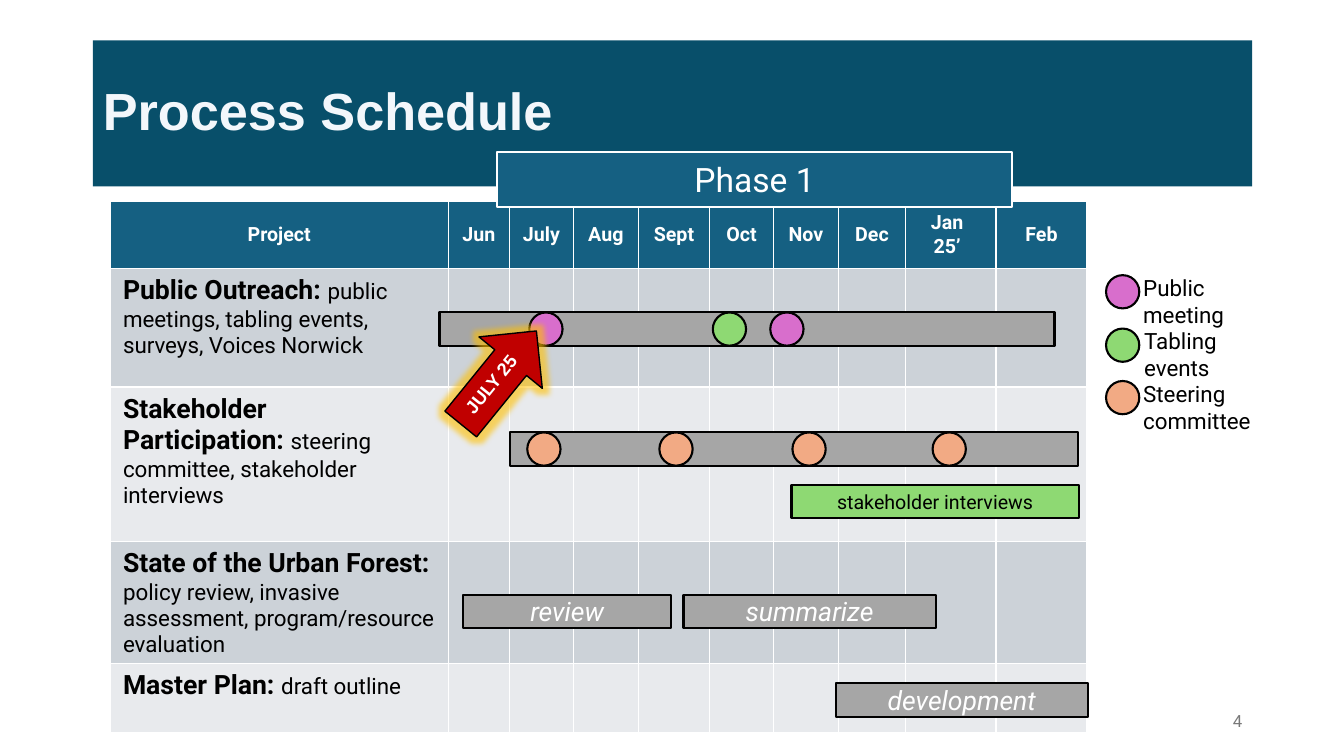
from dataclasses import dataclass
from itertools import product

from lxml.etree import SubElement
from pptx import Presentation
from pptx.dml.color import RGBColor
from pptx.enum.shapes import MSO_SHAPE as Preset
from pptx.enum.text import MSO_ANCHOR as Anchor, MSO_AUTO_SIZE as AutoSize, PP_ALIGN as Align
from pptx.oxml.ns import qn
from pptx.shapes.autoshape import Shape
from pptx.slide import Slide
from pptx.text.text import Font, TextFrame
from pptx.util import Pt

EMU_PER_PX = 9144


@dataclass(frozen=True)
class Theme:
    heading_font: str = "Arial"
    body_font: str = "Roboto"
    banner: str = "084F6A"
    title_text: str = "F3F7FB"
    header: str = "156082"
    bands: tuple[str, str] = ("CCD2D8", "E8EAED")
    white: str = "FFFFFF"
    black: str = "000000"
    page: str = "797979"
    bar: str = "A6A6A6"
    meeting: str = "D86ECC"
    tabling: str = "8ED973"
    steering: str = "F2AA84"
    arrow: str = "C00000"
    glow: str = "FFC000"
    title_size: float = 37.3
    phase_size: float = 24
    project_size: float = 19
    detail_size: float = 16
    header_size: float = 14
    arrow_size: float = 13
    page_size: float = 12


THEME = Theme()


@dataclass(frozen=True)
class Box:
    left: int
    top: int
    width: int
    height: int

    def emu(self) -> tuple[int, int, int, int]:
        return px(self.left), px(self.top), px(self.width), px(self.height)


@dataclass(frozen=True)
class TextStyle:
    size: float
    color: str
    bold: bool = False
    italic: bool = False
    font: str = THEME.body_font


@dataclass(frozen=True)
class Bar:
    box: Box
    label: str
    fill: str
    style: TextStyle


@dataclass(frozen=True)
class MarkerRow:
    top: int
    color: str
    lefts: tuple[int, ...]


@dataclass(frozen=True)
class LegendEntry:
    label: str
    color: str
    left: int
    top: int


@dataclass(frozen=True)
class Project:
    name: str
    detail: str
    height: int


HEADER_STYLE = TextStyle(THEME.header_size, THEME.white, bold=True)
NAME_STYLE = TextStyle(THEME.project_size, THEME.black, bold=True)
DETAIL_STYLE = TextStyle(THEME.detail_size, THEME.black)
PHASE_STYLE = TextStyle(THEME.phase_size, THEME.white)
TASK_STYLE = TextStyle(THEME.project_size, THEME.white, italic=True)
INTERVIEW_STYLE = TextStyle(THEME.header_size, THEME.black)
ARROW_STYLE = TextStyle(THEME.arrow_size, THEME.white, bold=True, font=THEME.heading_font)
TITLE_STYLE = TextStyle(THEME.title_size, THEME.title_text, bold=True, font=THEME.heading_font)
PAGE_STYLE = TextStyle(THEME.page_size, THEME.page)

MARKER_SIZE = 33
BAR_HEIGHT = 33
HEADER_HEIGHT = 66
TABLE_LEFT, TABLE_TOP = 109, 200
NARROWED_CELLS = {(0, 8), (2, 0)}
COLUMNS = {"Project": 336, "Jun": 60, "July": 64, "Aug": 64, "Sept": 71, "Oct": 63,
           "Nov": 65, "Dec": 66, "Jan 25’": 90, "Feb": 90}
PROJECTS = (
    Project("Public Outreach: ", "public meetings, tabling events, surveys, Voices Norwick", 118),
    Project("Stakeholder Participation: ", "steering committee, stakeholder interviews", 153),
    Project("State of the Urban Forest: ",
            "policy review, invasive assessment, program/resource evaluation", 121),
    Project("Master Plan: ", "draft outline", 69),
)
BARS = (
    Bar(Box(436, 310, 610, BAR_HEIGHT), "", THEME.bar, TASK_STYLE),
    Bar(Box(506, 429, 563, BAR_HEIGHT), "", THEME.bar, TASK_STYLE),
    Bar(Box(785, 481, 285, BAR_HEIGHT), "stakeholder interviews", THEME.tabling, INTERVIEW_STYLE),
    Bar(Box(459, 590, 207, BAR_HEIGHT), "review", THEME.bar, TASK_STYLE),
    Bar(Box(678, 590, 250, BAR_HEIGHT), "summarize", THEME.bar, TASK_STYLE),
    Bar(Box(829, 678, 250, BAR_HEIGHT), "development", THEME.bar, TASK_STYLE),
)
MARKERS = (
    MarkerRow(310, THEME.meeting, (525, 764)),
    MarkerRow(310, THEME.tabling, (707,)),
    MarkerRow(429, THEME.steering, (523, 654, 786, 925)),
)
LEGEND = (
    LegendEntry("Public meeting", THEME.meeting, 1124, 273),
    LegendEntry("Tabling events", THEME.tabling, 1125, 326),
    LegendEntry("Steering committee", THEME.steering, 1124, 378),
)


def px(length: int) -> int:
    return length * EMU_PER_PX


def rgb(color: str) -> RGBColor:
    return RGBColor.from_string(color)


def format_font(font: Font, style: TextStyle) -> None:
    font.name, font.size = style.font, Pt(style.size)
    font.bold, font.italic = style.bold, style.italic
    font.color.rgb = rgb(style.color)


def write(frame: TextFrame, text: str, style: TextStyle, align: Align = Align.LEFT) -> None:
    frame.text = text
    paragraph = frame.paragraphs[0]
    paragraph.alignment = align
    for run in paragraph.runs:
        format_font(run.font, style)


def add_block(slide: Slide, preset: Preset, box: Box, fill: str,
              line: str = THEME.black, line_width: float = 1.5) -> Shape:
    shape = slide.shapes.add_shape(preset, *box.emu())
    shape.shadow.inherit = False
    shape.fill.solid()
    shape.fill.fore_color.rgb = rgb(fill)
    shape.line.color.rgb = rgb(line)
    shape.line.width = Pt(line_width)
    return shape


def add_label(shape: Shape, text: str, style: TextStyle) -> None:
    frame = shape.text_frame
    frame.margin_left = frame.margin_right = frame.margin_top = frame.margin_bottom = 0
    frame.vertical_anchor = Anchor.MIDDLE
    write(frame, text, style, Align.CENTER)


def add_text(slide: Slide, box: Box, text: str, style: TextStyle,
             align: Align = Align.LEFT, anchor: Anchor = Anchor.TOP) -> None:
    frame = slide.shapes.add_textbox(*box.emu()).text_frame
    frame.word_wrap = True
    frame.vertical_anchor = anchor
    write(frame, text, style, align)


def add_marker(slide: Slide, left: int, top: int, color: str) -> None:
    add_block(slide, Preset.OVAL, Box(left, top, MARKER_SIZE, MARKER_SIZE), color)


def format_title(slide: Slide) -> None:
    title = slide.shapes.title
    title.left, title.top, title.width, title.height = Box(92, 40, 1150, 145).emu()
    title.fill.solid()
    title.fill.fore_color.rgb = rgb(THEME.banner)
    frame = title.text_frame
    frame.auto_size = AutoSize.NONE
    frame.vertical_anchor = Anchor.MIDDLE
    write(frame, "Process Schedule", TITLE_STYLE)
    frame.paragraphs[0].line_spacing = 0.9


def add_schedule(slide: Slide) -> None:
    heights = [HEADER_HEIGHT, *(project.height for project in PROJECTS)]
    box = Box(TABLE_LEFT, TABLE_TOP, sum(COLUMNS.values()), sum(heights))
    table = slide.shapes.add_table(len(heights), len(COLUMNS), *box.emu()).table
    for column, width in zip(table.columns, COLUMNS.values()):
        column.width = px(width)
    for row, height in zip(table.rows, heights):
        row.height = px(height)
    for row, column in product(range(len(heights)), range(len(COLUMNS))):
        cell = table.cell(row, column)
        cell.margin_left = px(13)
        cell.margin_right = px(20 if (row, column) in NARROWED_CELLS else 13)
        cell.margin_top = px(7)
        cell.margin_bottom = px(2 if row else 7)
        cell.fill.solid()
        cell.fill.fore_color.rgb = rgb(THEME.bands[(row - 1) % 2] if row else THEME.header)
    for column, name in enumerate(COLUMNS):
        cell = table.cell(0, column)
        cell.vertical_anchor = Anchor.MIDDLE
        write(cell.text_frame, name, HEADER_STYLE, Align.CENTER)
    for row, project in enumerate(PROJECTS, start=1):
        frame = table.cell(row, 0).text_frame
        write(frame, project.name, NAME_STYLE)
        detail = frame.paragraphs[0].add_run()
        detail.text = project.detail
        format_font(detail.font, DETAIL_STYLE)


def add_date_arrow(slide: Slide) -> None:
    arrow = add_block(slide, Preset.RIGHT_ARROW, Box(435, 334, 119, 81), THEME.arrow, line_width=1)
    arrow.rotation = 309.1
    add_label(arrow, "JULY 25", ARROW_STYLE)
    arrow.text_frame.paragraphs[0].line_spacing = 0.8
    effects = arrow._element.spPr.find(qn("a:effectLst"))
    glow = SubElement(effects, qn("a:glow"), rad=str(px(11)))
    color = SubElement(glow, qn("a:srgbClr"), val=THEME.glow)
    SubElement(color, qn("a:alpha"), val="60000")


def main() -> None:
    presentation = Presentation()
    presentation.slide_width, presentation.slide_height = px(1333), px(750)
    slide = presentation.slides.add_slide(presentation.slide_layouts[5])
    format_title(slide)
    add_text(slide, Box(942, 695, 300, 40), "4", PAGE_STYLE, Align.RIGHT, Anchor.MIDDLE)
    add_schedule(slide)
    phase = add_block(slide, Preset.RECTANGLE, Box(493, 151, 511, 54), THEME.header, THEME.white)
    add_label(phase, "Phase 1", PHASE_STYLE)
    for bar in BARS:
        shape = add_block(slide, Preset.RECTANGLE, bar.box, bar.fill)
        if bar.label:
            add_label(shape, bar.label, bar.style)
    for row in MARKERS:
        for left in row.lefts:
            add_marker(slide, left, row.top, row.color)
    for entry in LEGEND:
        add_marker(slide, 1097, entry.top, entry.color)
        add_text(slide, Box(entry.left, entry.top - 6, 130, 63), entry.label, DETAIL_STYLE)
    add_date_arrow(slide)
    presentation.save("out.pptx")


if __name__ == "__main__":
    main()
